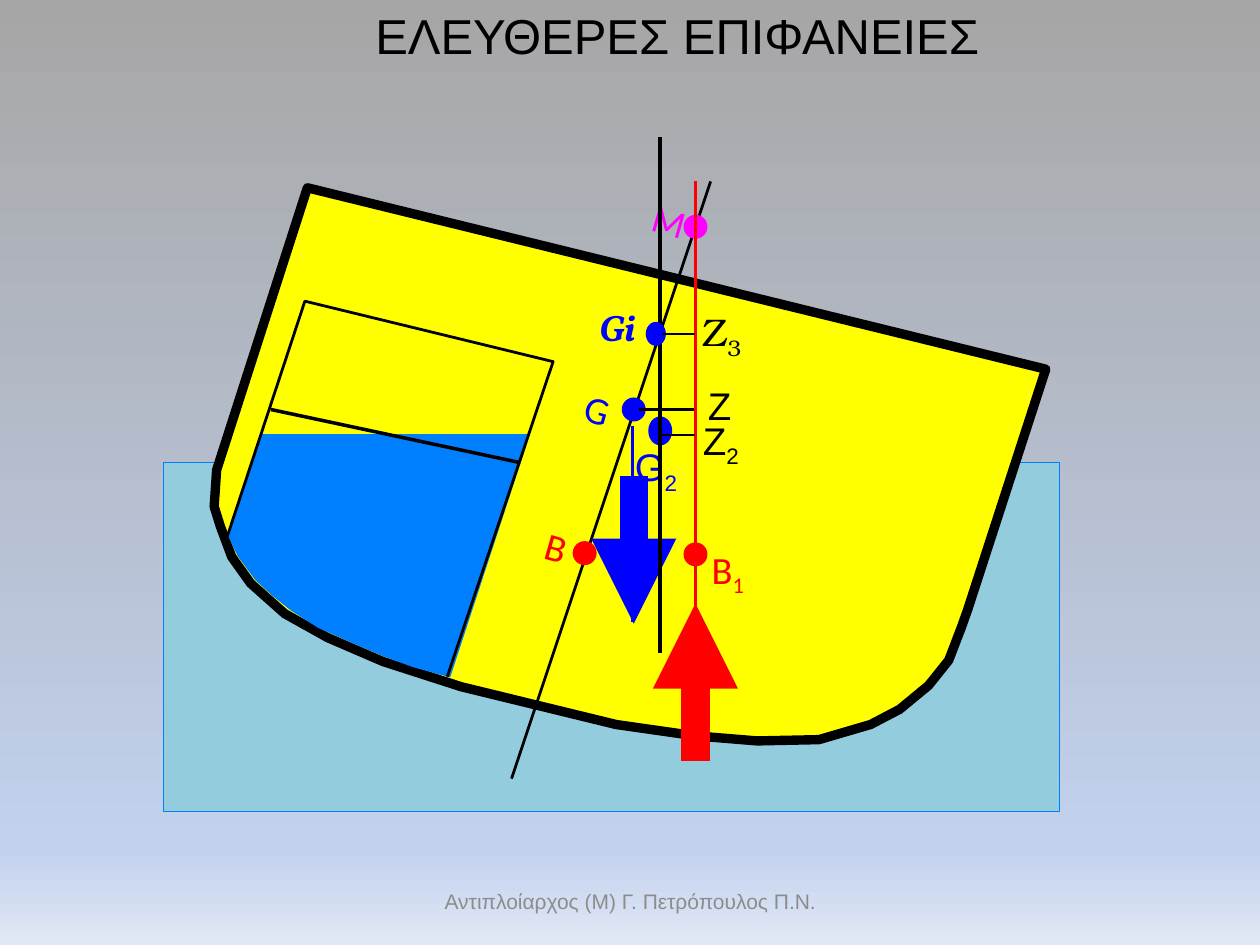
from lxml import etree
from pptx import Presentation
from pptx.dml.color import RGBColor
from pptx.enum.shapes import MSO_CONNECTOR, MSO_SHAPE
from pptx.enum.text import MSO_ANCHOR, MSO_AUTO_SIZE, PP_ALIGN
from pptx.oxml.ns import qn
from pptx.util import Pt

EMU_PER_PX = 9144
RECT, OVAL = MSO_SHAPE.RECTANGLE, MSO_SHAPE.OVAL
STRAIGHT = MSO_CONNECTOR.STRAIGHT
MIDDLE = MSO_ANCHOR.MIDDLE
CENTER, LEFT = PP_ALIGN.CENTER, PP_ALIGN.LEFT
GROW, FIXED = MSO_AUTO_SIZE.SHAPE_TO_FIT_TEXT, MSO_AUTO_SIZE.NONE

BLACK, BLUE, RED, MAGENTA = "000000", "0000FF", "FF0000", "FF00FF"
YELLOW, LIQUID, SEA, GREY = "FFFF00", "0080FF", "93CDDD", "8C8C8C"
HEEL = 16
LABEL = {"line_spacing": 0.85, "space_before": Pt(7.9), "alignment": LEFT}
HEADING = {"alignment": CENTER}


def px(n):
    return int(n * EMU_PER_PX)


def rgb(color):
    return RGBColor.from_string(color)


class Diagram:
    def __init__(self, prs):
        self.s = prs.slides.add_slide(prs.slide_layouts[6])
        self.shapes = self.s.shapes

    def background(self, stops):
        fill = self.s.background.fill
        fill.gradient()
        fill.gradient_angle = 270
        gs_list = next(self.s.element.iter(qn("a:gsLst")))
        for gs in list(gs_list):
            gs_list.remove(gs)
        for pos, color in stops:
            gs = etree.SubElement(gs_list, qn("a:gs"), pos=str(pos * 1000))
            etree.SubElement(gs, qn("a:srgbClr"), val=color)

    def style(self, sp, fill, line, width):
        sp.shadow.inherit = False
        if fill:
            sp.fill.solid()
            sp.fill.fore_color.rgb = rgb(fill)
        else:
            sp.fill.background()
        sp.line.color.rgb = rgb(line)
        sp.line.width = Pt(width)

    def shape(self, kind, box, fill, line, rotation=0):
        sp = self.shapes.add_shape(kind, *map(px, box))
        sp.rotation = rotation
        self.style(sp, fill, line, 0)

    def dot(self, x, y, color, w=18, h=18, rotation=0):
        self.shape(OVAL, (x, y, w, h), color, color, rotation)

    def outline(self, points, fill, line, width, close=True):
        points = [(px(x), px(y)) for x, y in points]
        fb = self.shapes.build_freeform(*points[0])
        fb.add_line_segments(points[1:], close=close)
        self.style(fb.convert_to_shape(), fill, line, width)

    def line(self, start, end, color=BLACK, width=0, arrow=False):
        c = self.shapes.add_connector(STRAIGHT, *map(px, start + end))
        c.line.color.rgb = rgb(color)
        c.line.width = Pt(width)
        if arrow:
            ln = c.line._get_or_add_ln()
            etree.SubElement(ln, qn("a:tailEnd"), type="triangle")
        etree.SubElement(c._element.spPr, qn("a:effectLst"))

    def text(self, box, text, color, sub="", size=22, font="Arial",
             rotation=0, wrap=True, fmt=LABEL, bold=False, italic=False):
        sp = self.shapes.add_textbox(*map(px, box))
        sp.rotation = rotation
        tf = sp.text_frame
        frame = {"word_wrap": wrap, "vertical_anchor": MIDDLE,
                 "auto_size": FIXED if wrap else GROW}
        p = tf.paragraphs[0]
        face = {"name": font, "size": Pt(size), "bold": bold, "italic": italic}
        targets = [(tf, frame), (p, fmt)]
        for part in filter(None, (text, sub)):
            r = p.add_run()
            r.text = part
            r.font.color.rgb = rgb(color)
            targets.append((r.font, face))
        if sub:
            r._r.get_or_add_rPr().set("baseline", "-25000")
        for target, values in targets:
            for name, value in values.items():
                setattr(target, name, value)


HULL = [(244, 149), (172, 373), (170, 402), (175, 418), (184, 442), (199, 463),
        (226, 487), (260, 506), (304, 525), (366, 545), (489, 575), (552, 584),
        (601, 588), (650, 587), (691, 575), (714, 563), (737, 544), (753, 524),
        (763, 498), (768, 484), (830, 293)]
TANK_LIQUID = [(208, 345), (420, 345), (357, 537), (328, 529), (306, 521),
               (280, 510), (253, 498), (231, 484), (216, 472), (203, 460),
               (189, 441), (181, 424)]
TANK_WALLS = [(179, 430), (242, 239), (439, 287), (355, 537)]


def main():
    prs = Presentation()
    prs.slide_width, prs.slide_height = px(1000), px(750)
    d = Diagram(prs)
    d.background([(0, "A6A6A6"), (90, "C2D1ED"), (100, "E1E8F5")])
    d.text((342, 695, 317, 40), "Αντιπλοίαρχος (Μ) Γ. Πετρόπουλος Π.Ν.", GREY,
           size=12, fmt=HEADING)
    d.text((130, 4, 815, 48), "ΕΛΕΥΘΕΡΕΣ ΕΠΙΦΑΝΕΙΕΣ", BLACK, size=28, fmt=HEADING)

    d.shape(RECT, (130, 367, 711, 277), SEA, LIQUID)
    d.outline(HULL, YELLOW, BLACK, 5.35)
    d.outline(TANK_LIQUID, LIQUID, LIQUID, 0)
    d.line((564, 144), (406, 618), width=1.6)
    d.outline(TANK_WALLS, None, BLACK, 1.6, close=False)

    for x, y, box, name, color in [
        (494, 316, (454, 301, 40, 53), "G", BLUE),
        (455, 430, (423, 413, 26, 44), "B", RED),
        (543, 171, (508, 154, 33, 44), "M", MAGENTA),
    ]:
        d.dot(x, y, color, rotation=HEEL)
        d.text(box, name, color, font="Calibri", rotation=HEEL)
    d.dot(543, 431, RED)
    d.text((555, 423, 68, 60), "B", RED, sub="1", font="Calibri")
    d.line((215, 325), (412, 367))

    d.line((502, 338), (502, 494), BLUE)
    d.line((503, 378), (503, 495), BLUE, 16.2, arrow=True)
    d.line((552, 599), (552, 144), RED)
    d.line((552, 604), (552, 479), RED, 16.2, arrow=True)

    d.text((552, 304, 39, 41), "Z", BLACK, wrap=False)
    d.line((507, 325), (551, 325))
    d.text((494, 351, 56, 41), "G", BLUE, sub="2", wrap=False)
    d.dot(515, 331, BLUE, h=22)
    d.line((525, 345), (552, 345), width=1.05)
    d.text((548, 330, 51, 41), "Z", BLACK, sub="2", wrap=False)
    d.line((524, 109), (524, 518))
    d.dot(513, 256, BLUE, w=15)
    d.text((466, 242, 53, 40), "Gi", BLUE, size=21, font="Vollkorn",
           wrap=False, bold=True, italic=True)
    d.line((525, 265), (552, 265), width=1.05)
    d.text((548, 244, 53, 41), "Z", BLACK, sub="3", font="TeX Gyre Bonum", wrap=False)
    prs.save("out.pptx")


if __name__ == "__main__":
    main()
